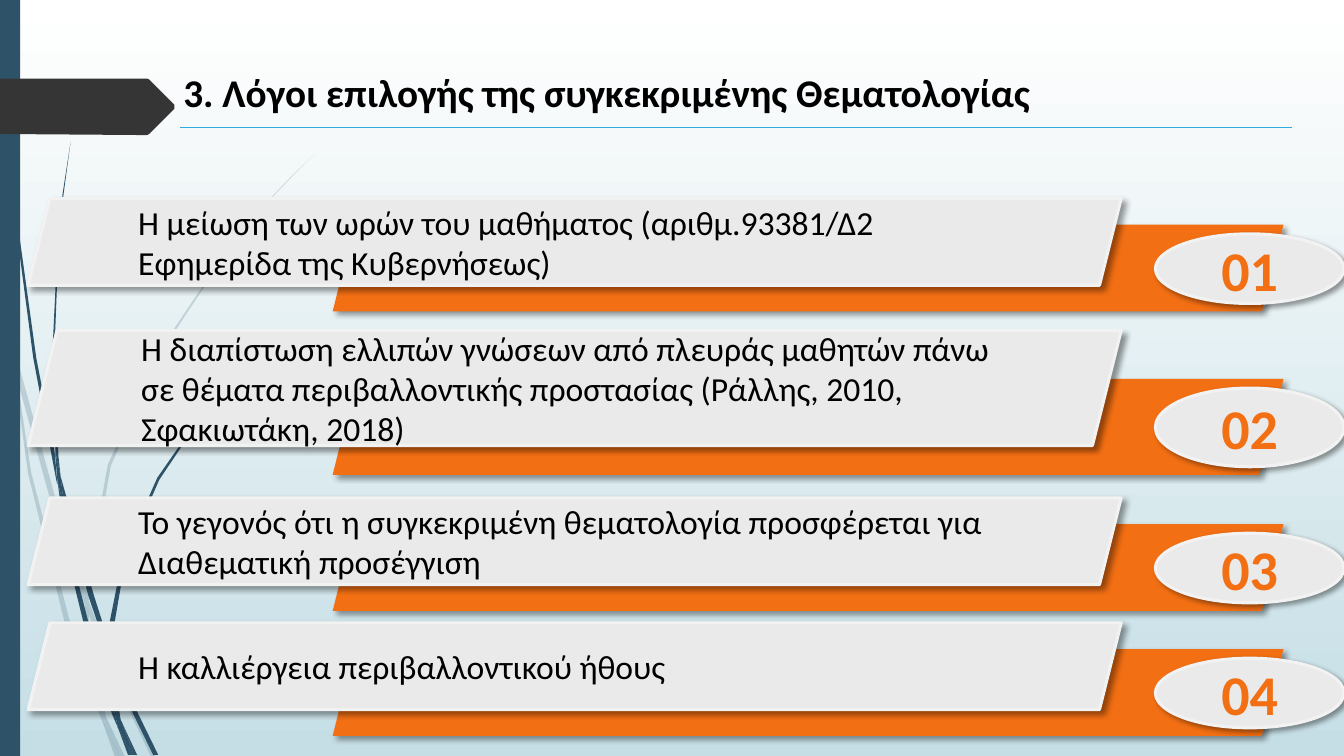
from lxml import etree
from pptx import Presentation
from pptx.dml.color import RGBColor
from pptx.enum.shapes import MSO_CONNECTOR, MSO_SHAPE
from pptx.enum.text import MSO_ANCHOR, PP_ALIGN
from pptx.oxml import parse_xml
from pptx.oxml.ns import qn
from pptx.util import Pt

PX = 9144
WIDTH, HEIGHT = 1333, 750
FONT = "Calibri"
RECTANGLE, PARALLELOGRAM, OVAL = MSO_SHAPE.RECTANGLE, MSO_SHAPE.PARALLELOGRAM, MSO_SHAPE.OVAL
STRAIGHT = MSO_CONNECTOR.STRAIGHT
LEFT, CENTER = PP_ALIGN.LEFT, PP_ALIGN.CENTER
TOP, MIDDLE = MSO_ANCHOR.TOP, MSO_ANCHOR.MIDDLE
COLORS = {
    "sky": "FFFFFF",
    "mist": "C5DEE5",
    "navy": "2E5369",
    "charcoal": "353535",
    "orange": "F36F13",
    "panel": "EAEAEA",
    "edge": "F2F2F2",
    "rule": "2FACDC",
    "black": "000000",
}
SHADOW = (
    '<a:outerShdw xmlns:a="http://schemas.openxmlformats.org/drawingml/2006/main" '
    'blurRad="50800" dist="38100" dir="2700000" algn="tl" rotWithShape="0">'
    '<a:srgbClr val="000000"><a:alpha val="40000"/></a:srgbClr></a:outerShdw>'
)

PALE_BLADES = [
    [(11, 350), (8, 322), (0, 282), (0, 299), (10, 344)],
    [(57, 522), (84, 599), (85, 586), (62, 520), (14, 345), (17, 376)],
    [(92, 607), (88, 596), (88, 610), (123, 694), (150, 751), (155, 751), (127, 692)],
    [(119, 751), (124, 751), (105, 711)],
    [(93, 683), (70, 619), (31, 469), (17, 376), (11, 350), (28, 470), (65, 621),
     (92, 693), (101, 714), (99, 707)],
    [(84, 599), (87, 646), (93, 683), (96, 692), (105, 711), (104, 706), (91, 646),
     (88, 610), (88, 608)],
    [(88, 584), (110, 462), (160, 349), (229, 245), (268, 198), (290, 175), (312, 153),
     (289, 175), (268, 197), (228, 244), (158, 348), (107, 461), (85, 584), (85, 586), (88, 596)],
    [(101, 714), (114, 751), (119, 751)],
    [(88, 608), (88, 610), (88, 596), (85, 586), (84, 599)],
    [(96, 692), (93, 683), (99, 707), (101, 714), (119, 751), (105, 711)],
]
DARK_BLADES = [
    [(7, 110), (17, 233), (33, 355), (56, 477), (57, 481), (55, 457), (55, 453), (36, 355),
     (19, 232), (8, 109), (5, 48), (3, 0), (3, 48)],
    [(88, 592), (106, 645), (106, 633), (106, 631), (93, 590), (60, 472), (64, 505)],
    [(113, 649), (110, 641), (111, 656), (132, 708), (152, 749), (157, 749), (136, 706)],
    [(110, 691), (98, 657), (72, 556), (64, 505), (57, 477), (68, 557), (93, 659),
     (111, 708), (117, 722), (116, 717)],
    [(60, 472), (58, 453), (54, 349), (58, 245), (63, 193), (70, 141), (62, 193),
     (57, 245), (52, 349), (55, 449)],
    [(133, 749), (136, 749), (122, 719)],
    [(57, 477), (64, 505), (60, 472), (55, 449), (55, 453)],
    [(111, 633), (125, 552), (158, 476), (205, 406), (231, 374), (246, 359), (261, 344),
     (245, 358), (231, 373), (204, 405), (156, 474), (122, 551), (106, 631), (110, 641)],
    [(117, 722), (127, 749), (131, 749)],
    [(106, 645), (110, 692), (116, 706), (122, 719), (120, 716), (111, 656), (109, 651)],
    [(106, 645), (109, 651), (111, 656), (110, 641), (106, 631), (106, 633)],
    [(116, 706), (110, 691), (116, 717), (117, 722), (131, 749), (133, 749), (122, 719)],
]
TITLE_ARROW = [(173, 108), (148, 133), (146, 134), (136, 134), (0, 133), (0, 78),
               (146, 78), (148, 79), (173, 104)]
REASONS = [
    (197, 86, 223, 86, "Η μείωση των ωρών του μαθήματος (αριθμ.93381/Δ2 Εφημερίδα της Κυβερνήσεως)"),
    (328, 114, 376, 95, "Η διαπίστωση ελλιπών γνώσεων από πλευράς μαθητών πάνω σε θέματα "
                        "περιβαλλοντικής προστασίας (Ράλλης, 2010, Σφακιωτάκη, 2018)"),
    (494, 86, 520, 86, "Το γεγονός ότι η συγκεκριμένη θεματολογία προσφέρεται για Διαθεματική προσέγγιση"),
    (618, 86, 644, 86, "Η καλλιέργεια περιβαλλοντικού ήθους"),
]


def rgb(name):
    return RGBColor.from_string(COLORS[name])


def write_text(shape, text, size=24, color="black", bold=False, align=LEFT, anchor=MIDDLE):
    frame = shape.text_frame
    frame.word_wrap = True
    frame.vertical_anchor = anchor
    paragraph = frame.paragraphs[0]
    paragraph.alignment = align
    run = paragraph.add_run()
    run.text = text
    run.font.name = FONT
    run.font.size = Pt(size)
    run.font.bold = bold
    run.font.color.rgb = rgb(color)


class SlideBuilder:
    """Draws styled elements on one slide, with lengths in px."""

    def __init__(self, slide):
        self.slide = slide
        self.shapes = slide.shapes

    def background(self, top, bottom):
        fill = self.slide.background.fill
        fill.gradient()
        fill.gradient_angle = 270
        for stop, color in zip(fill.gradient_stops, (top, bottom)):
            stop.color.rgb = rgb(color)

    def paint(self, shape, fill, edge=None):
        shape.shadow.inherit = False
        shape.fill.solid()
        shape.fill.fore_color.rgb = rgb(fill)
        if edge:
            shape.line.color.rgb = rgb(edge)
            shape.line.width = Pt(2.25)
        else:
            shape.line.fill.background()

    def outline(self, points, fill, opacity=100):
        builder = self.shapes.build_freeform(*points[0], scale=PX)
        builder.add_line_segments(points[1:], close=True)
        shape = builder.convert_to_shape()
        self.paint(shape, fill)
        if opacity < 100:
            color = shape._element.spPr.find(qn("a:solidFill"))[0]
            etree.SubElement(color, qn("a:alpha")).set("val", str(opacity * 1000))

    def box(self, kind, left, top, width, height, fill, edge=None, shadow=False):
        shape = self.shapes.add_shape(kind, left * PX, top * PX, width * PX, height * PX)
        self.paint(shape, fill, edge)
        if shadow:
            shape._element.spPr.find(qn("a:effectLst")).append(parse_xml(SHADOW))
        return shape

    def label(self, left, top, width, height, text, **style):
        shape = self.shapes.add_textbox(left * PX, top * PX, width * PX, height * PX)
        write_text(shape, text, **style)

    def rule(self, left, right, top, color):
        line = self.shapes.add_connector(STRAIGHT, left * PX, top * PX, right * PX, top * PX)
        line.line.color.rgb = rgb(color)
        line.line.width = Pt(0.75)
        etree.SubElement(line._element.spPr, qn("a:effectLst"))

    def reason(self, number, panel_top, panel_height, band_top, band_height, text):
        self.box(PARALLELOGRAM, 330, band_top, 943, band_height, "orange", shadow=True)
        badge = self.box(OVAL, 1146, band_top + 9, 187, band_height - 17, "panel", "edge", shadow=True)
        write_text(badge, f"{number:02}", size=40, color="orange", bold=True, align=CENTER)
        panel = self.box(PARALLELOGRAM, 28, panel_top, 1084, panel_height, "panel", "edge", shadow=True)
        write_text(panel, text)


def main():
    presentation = Presentation()
    presentation.slide_width = WIDTH * PX
    presentation.slide_height = HEIGHT * PX
    builder = SlideBuilder(presentation.slides.add_slide(presentation.slide_layouts[6]))
    builder.background("sky", "mist")
    for blades, opacity in ((PALE_BLADES, 20), (DARK_BLADES, 100)):
        for blade in blades:
            builder.outline(blade, "navy", opacity)
    builder.box(RECTANGLE, 0, 0, 20, HEIGHT, "navy")
    builder.outline(TITLE_ARROW, "charcoal")
    for number, reason in enumerate(REASONS, start=1):
        builder.reason(number, *reason)
    builder.label(172, 63, 1179, 57, "3. Λόγοι επιλογής της συγκεκριμένης Θεματολογίας",
                  size=28, bold=True, anchor=TOP)
    builder.rule(179, 1281, 127, "rule")
    presentation.save("out.pptx")


if __name__ == "__main__":
    main()
